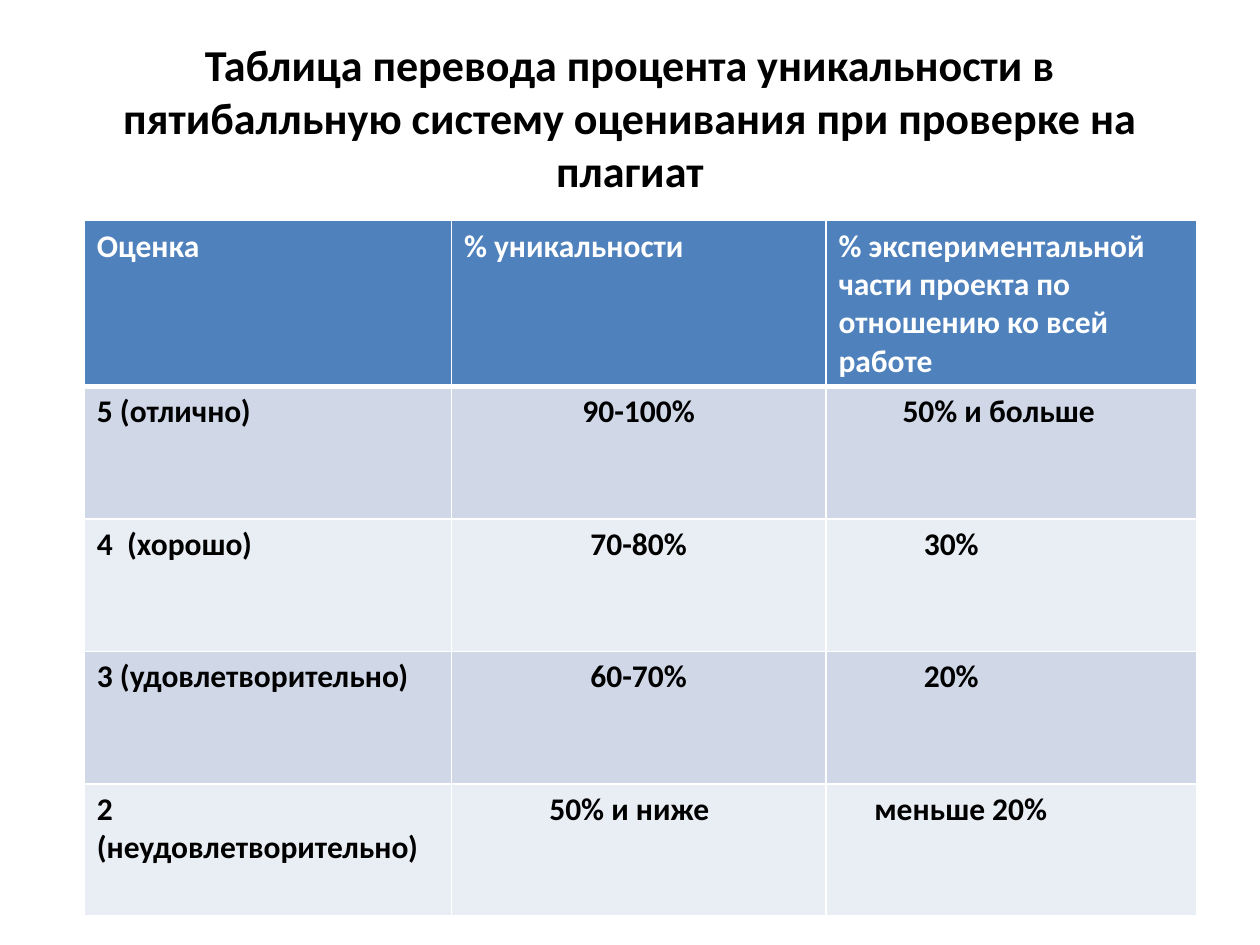
from lxml import etree
from pptx import Presentation
from pptx import util as u
from pptx.dml.color import RGBColor
from pptx.enum import text
from pptx.oxml.ns import qn

TITLE = ("Таблица перевода процента уникальности в пятибалльную "
         "систему оценивания при проверке на плагиат")
HEADER = ["Оценка", "% уникальности",
          "% экспериментальной части проекта по отношению ко всей работе"]
CENTER = "center"
# Each cell: text, then its left indent in cm or CENTER
ROWS = [
    [("5 (отлично)", 0), ("90-100%", CENTER), ("50% и больше", 1.29)],
    [("4  (хорошо)", 0), ("70-80%", CENTER), ("30%", 1.72)],
    [("3 (удовлетворительно)", 0), ("60-70%", CENTER), ("20%", 1.72)],
    [("2 (неудовлетворительно)", 0), ("50% и ниже", 1.72), ("меньше 20%", 0.72)],
]

THEME = {
    "font": "Calibri", "title_size": 25.2, "cell_size": 18,
    "ink": "000000", "paper": "FFFFFF",
    "header": "4F81BD", "bands": ["D0D8E8", "E9EDF4"],
    "line": 1, "header_line": 3,
}
TITLE_BOX = (1.27, 0.76, 22.86, 3.18)
TABLE_AT = (1.7, 4.45)
COL_WIDTHS = [7.4, 7.55, 7.47]
HEADER_HEIGHT, ROW_HEIGHT = 3.34, 2.67


def write(tf, content, size, color=THEME["ink"], align=text.PP_ALIGN.LEFT, indent=0):
    p = tf.paragraphs[0]
    p.alignment = align
    if indent:
        p._p.get_or_add_pPr().set("indent", str(u.Cm(indent)))
    r = p.add_run()
    r.text = content
    r.font.name, r.font.size, r.font.bold = THEME["font"], u.Pt(size), True
    r.font.color.rgb = RGBColor.from_string(color)


def set_borders(cell, bottom, top):
    tcPr = cell._tc.get_or_add_tcPr()
    widths = {"a:lnL": THEME["line"], "a:lnR": THEME["line"],
              "a:lnT": top, "a:lnB": bottom}
    for i, (tag, width) in enumerate(widths.items()):
        ln = etree.Element(qn(tag), w=str(u.Pt(width)))
        fill = etree.SubElement(ln, qn("a:solidFill"))
        etree.SubElement(fill, qn("a:srgbClr"), val=THEME["paper"])
        tcPr.insert(i, ln)


def add_title(s):
    tf = s.shapes.add_textbox(*map(u.Cm, TITLE_BOX)).text_frame
    tf.word_wrap = True
    tf.vertical_anchor = text.MSO_ANCHOR.MIDDLE
    write(tf, TITLE, THEME["title_size"], align=text.PP_ALIGN.CENTER)


def add_grades(s):
    rows = [[(label, 0) for label in HEADER]] + ROWS
    heights = [HEADER_HEIGHT] + [ROW_HEIGHT] * len(ROWS)
    size = (sum(COL_WIDTHS), sum(heights))
    table = s.shapes.add_table(len(rows), len(HEADER),
                               *map(u.Cm, TABLE_AT + size)).table
    for col, width in zip(table.columns, COL_WIDTHS):
        col.width = u.Cm(width)
    for i, (row, height) in enumerate(zip(rows, heights)):
        table.rows[i].height = u.Cm(height)
        fill = THEME["bands"][(i - 1) % 2] if i else THEME["header"]
        color = THEME["ink"] if i else THEME["paper"]
        for j, (content, place) in enumerate(row):
            cell = table.cell(i, j)
            cell.fill.solid()
            cell.fill.fore_color.rgb = RGBColor.from_string(fill)
            set_borders(cell,
                        bottom=THEME["line"] if i else THEME["header_line"],
                        top=THEME["header_line"] if i == 1 else THEME["line"])
            layout = ({"align": text.PP_ALIGN.CENTER} if place == CENTER
                      else {"indent": place})
            write(cell.text_frame, content, THEME["cell_size"], color, **layout)


def main():
    prs = Presentation()
    prs.slide_width, prs.slide_height = u.Cm(25.4), u.Cm(19.05)
    s = prs.slides.add_slide(prs.slide_layouts[6])
    add_title(s)
    add_grades(s)
    prs.save("out.pptx")


if __name__ == "__main__":
    main()
